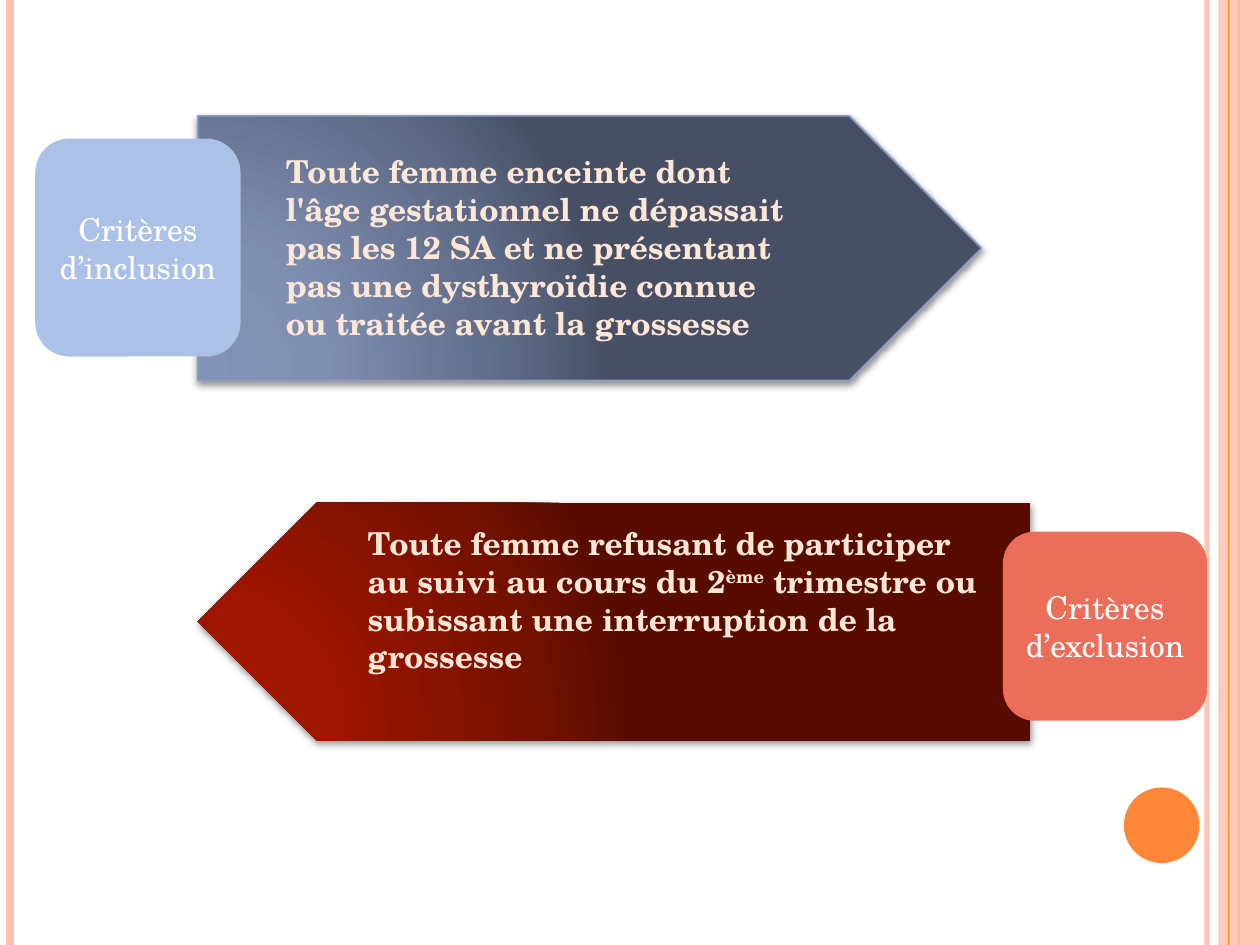
from dataclasses import dataclass
from typing import Optional

import lxml.etree
import pptx
import pptx.dml.color
import pptx.enum.shapes
import pptx.enum.text
import pptx.oxml.ns
import pptx.util

Inches = pptx.util.Inches
Kind = pptx.enum.shapes.MSO_SHAPE
qn = pptx.oxml.ns.qn


@dataclass(frozen=True)
class Theme:
    font: str = "TeX Gyre Schola"
    text_size: int = 18
    peach: str = "FEC3AE"
    orange: str = "FE8637"
    cream: str = "FFE7D7"
    white: str = "FFFFFF"
    shadow: str = "000000"


@dataclass(frozen=True)
class Area:
    left: float
    top: float
    width: float
    height: float


@dataclass(frozen=True)
class Stripe:
    x: float
    color: str
    width: float
    opacity: int = 100


@dataclass(frozen=True)
class Arrow:
    area: Area
    colors: tuple[str, ...]
    rotation: int
    outline: Optional[str]
    text_area: Area
    runs: tuple[tuple[str, bool], ...]


@dataclass(frozen=True)
class Label:
    area: Area
    color: str
    text: str


THEME = Theme()
GRADIENT_STOPS = (0, 30, 75, 100)

LEFT_STRIPES = (Stripe(9.58, THEME.peach, 3, 93), Stripe(0.08, THEME.peach, 4.5), Stripe(9.83, THEME.orange, 1.5))
BAND_STRIPE = Stripe(9.75, THEME.orange, 0.75)

ARROWS = (
    Arrow(
        Area(1.57, 3.99, 6.61, 1.89), ("A41700", "9F1600", "771100", "580C00"), 180, None,
        Area(2.82, 4.11, 5.17, 1.3),
        (
            ("Toute femme refusant de participer au suivi au cours du 2", False),
            ("ème", True),
            (" trimestre ou subissant une interruption de la grossesse", False),
        ),
    ),
    Arrow(
        Area(1.57, 0.92, 6.22, 2.1), ("8494B9", "7F8FB2", "5E6B87", "464F64"), 0, "8D9CBF",
        Area(2.17, 1.16, 4.25, 1.62),
        (
            (
                "Toute femme enceinte dont l'âge gestationnel ne dépassait pas les 12 SA "
                "et ne présentant pas une dysthyroïdie connue ou traitée avant la grossesse",
                False,
            ),
        ),
    ),
)

LABELS = (
    Label(Area(0.28, 1.1, 1.63, 1.73), "ACC1E8", "Critères d’inclusion"),
    Label(Area(7.96, 4.22, 1.62, 1.5), "EB6E5A", "Critères d’exclusion"),
)


def rgb(color: str) -> pptx.dml.color.RGBColor:
    return pptx.dml.color.RGBColor.from_string(color)


def placed(area: Area) -> tuple:
    return Inches(area.left), Inches(area.top), Inches(area.width), Inches(area.height)


def add_node(parent, tag: str, **attributes):
    return lxml.etree.SubElement(parent, qn(tag), {name: str(value) for name, value in attributes.items()})


def set_opacity(fill_parent, percent: int) -> None:
    color = fill_parent.find(qn("a:solidFill")).find(qn("a:srgbClr"))
    add_node(color, "a:alpha", val=percent * 1000)


def add_solid(slide, kind, area: Area, color: str):
    shape = slide.shapes.add_shape(kind, *placed(area))
    shape.shadow.inherit = False
    shape.fill.solid()
    shape.fill.fore_color.rgb = rgb(color)
    shape.line.fill.background()
    return shape


def add_stripe(slide, stripe: Stripe) -> None:
    x = Inches(stripe.x)
    line = slide.shapes.add_connector(pptx.enum.shapes.MSO_CONNECTOR.STRAIGHT, x, 0, x, Inches(7.5))
    line.line.color.rgb = rgb(stripe.color)
    line.line.width = pptx.util.Pt(stripe.width)
    properties = line._element.spPr
    if stripe.opacity < 100:
        set_opacity(properties.find(qn("a:ln")), stripe.opacity)
    add_node(properties, "a:effectLst")


def set_gradient(shape, colors: tuple[str, ...]) -> None:
    shape.fill.gradient()
    gradient = shape._element.spPr.find(qn("a:gradFill"))
    gradient.clear()
    gradient.set("rotWithShape", "1")
    stops = add_node(gradient, "a:gsLst")
    for position, color in zip(GRADIENT_STOPS, colors):
        stop = add_node(stops, "a:gs", pos=position * 1000)
        add_node(stop, "a:srgbClr", val=color)
    circle = add_node(gradient, "a:path", path="circle")
    add_node(circle, "a:fillToRect", l=5000, t=100000, r=120000, b=10000)


def set_shadow(shape) -> None:
    effects = shape._element.spPr.find(qn("a:effectLst"))
    shadow = add_node(
        effects, "a:outerShdw", blurRad=pptx.util.Pt(4), dist=pptx.util.Pt(1.6), dir=90 * 60000, rotWithShape=0
    )
    color = add_node(shadow, "a:srgbClr", val=THEME.shadow)
    add_node(color, "a:alpha", val=42000)


def style_font(para, color: str, bold: bool) -> None:
    para.font.name = THEME.font
    para.font.size = pptx.util.Pt(THEME.text_size)
    para.font.bold = bold
    para.font.color.rgb = rgb(color)


def add_arrow(slide, arrow: Arrow) -> None:
    shape = add_solid(slide, Kind.PENTAGON, arrow.area, arrow.colors[0])
    shape.rotation = arrow.rotation
    set_gradient(shape, arrow.colors)
    if arrow.outline:
        shape.line.color.rgb = rgb(arrow.outline)
        shape.line.width = pptx.util.Pt(1)
    set_shadow(shape)

    box = slide.shapes.add_textbox(*placed(arrow.text_area))
    box.text_frame.word_wrap = True
    para = box.text_frame.paragraphs[0]
    style_font(para, THEME.cream, True)
    for text, raised in arrow.runs:
        span = para.add_run()
        span.text = text
        if raised:
            span._r.get_or_add_rPr().set("baseline", "30000")


def add_label(slide, label: Label) -> None:
    shape = add_solid(slide, Kind.ROUNDED_RECTANGLE, label.area, label.color)
    frame = shape.text_frame
    frame.word_wrap = True
    frame.vertical_anchor = pptx.enum.text.MSO_ANCHOR.MIDDLE
    para = frame.paragraphs[0]
    para.text = label.text
    para.alignment = pptx.enum.text.PP_ALIGN.CENTER
    style_font(para, THEME.white, False)


def main() -> None:
    deck = pptx.Presentation()
    deck.slide_width, deck.slide_height = Inches(10), Inches(7.5)
    slide = deck.slides.add_slide(deck.slide_layouts[6])
    for stripe in LEFT_STRIPES:
        add_stripe(slide, stripe)
    band = add_solid(slide, Kind.RECTANGLE, Area(9.67, 0, 0.33, 7.5), THEME.peach)
    set_opacity(band._element.spPr, 87)
    add_stripe(slide, BAND_STRIPE)
    add_solid(slide, Kind.OVAL, Area(8.92, 6.25, 0.6, 0.6), THEME.orange)
    for arrow in ARROWS:
        add_arrow(slide, arrow)
    for label in LABELS:
        add_label(slide, label)
    deck.save("out.pptx")


if __name__ == "__main__":
    main()
